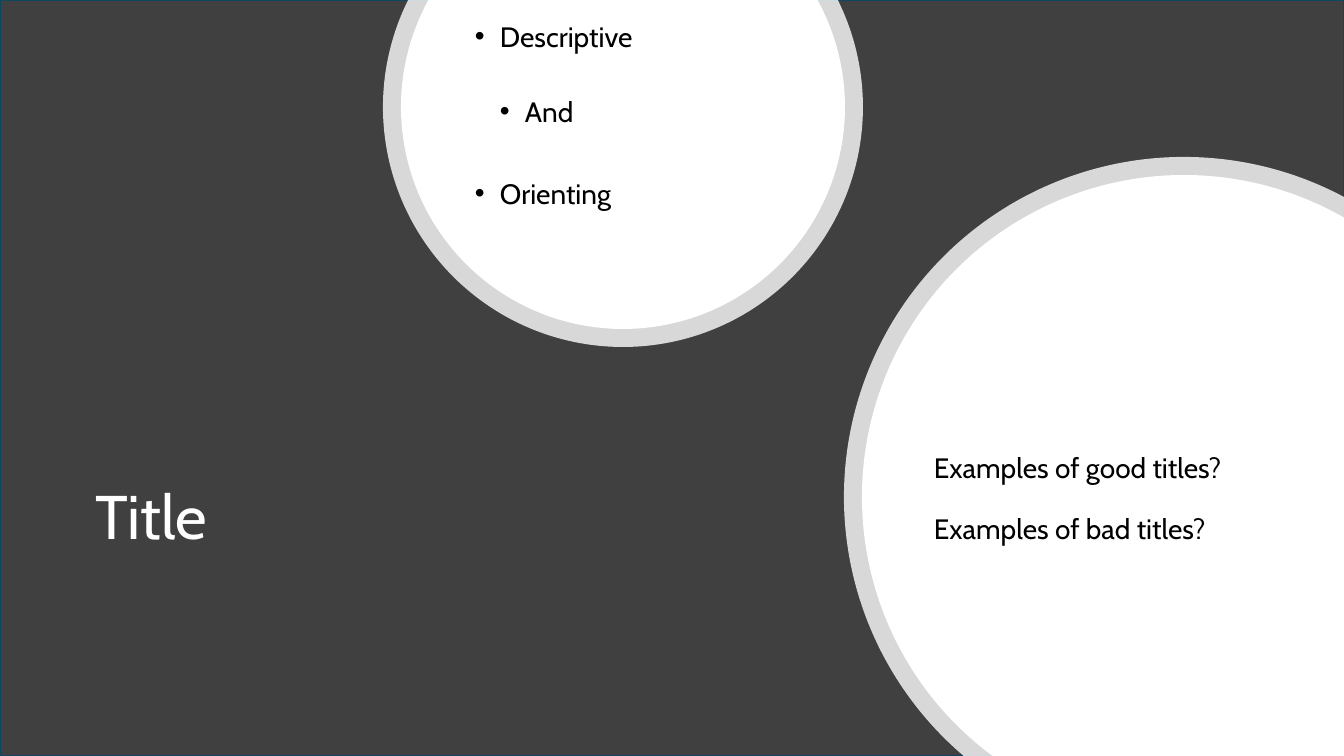
from math import acos, asin, cos, degrees, radians, sin

from lxml import etree
from pptx import Presentation
from pptx.dml.color import RGBColor
from pptx.enum.shapes import MSO_SHAPE as Shape
from pptx.enum.text import MSO_ANCHOR as Anchor, PP_ALIGN as Align
from pptx.oxml.ns import qn
from pptx.util import Pt

PX = 914400 / 100.8
WIDTH, HEIGHT = 1344, 756
FONT = "Cabin"
RING = 18
INDENT = 25


def px(value):
    return round(value * PX)


def color(hex_value):
    return RGBColor.from_string(hex_value)


def fill_white(shape, opacity):
    shape.fill.solid()
    shape.fill.fore_color.rgb = color("FFFFFF")
    if opacity < 100:
        tint = shape.element.spPr.find(".//" + qn("a:srgbClr"))
        etree.SubElement(tint, qn("a:alpha"), val=str(opacity * 1000))
    shape.line.fill.background()
    shape.shadow.inherit = False


def top_span(center_x, center_y, radius):
    """Angles of the arc that hangs from the top edge."""
    crossing = degrees(asin(center_y / radius))
    return -crossing, 180 + crossing


def corner_span(center_x, center_y, radius):
    """Angles of the arc from the bottom edge round to the right edge."""
    return (180 - degrees(asin((HEIGHT - center_y) / radius)),
            360 - degrees(acos((WIDTH - center_x) / radius)))


def add_cropped_disc(slide, center_x, center_y, radius, span, corners, opacity):
    """Draw a disc that stops at the slide edges."""
    start, end = span(center_x, center_y, radius)
    extremes = [angle for angle in range(0, 360, 90) if start < angle < end]
    arc = [(px(center_x + radius * cos(radians(angle))),
            px(center_y + radius * sin(radians(angle))))
           for angle in [start, *extremes, end]]
    edge = [(px(x), px(y)) for x, y in corners]
    builder = slide.shapes.build_freeform(*arc[0], scale=1.0)
    builder.add_line_segments(arc[1:] + edge, close=True)
    shape = builder.convert_to_shape()

    # Replace the chords between the extremes with one true arc
    outline = shape.element.spPr.find(".//" + qn("a:path"))
    for chord in outline.findall(qn("a:lnTo"))[:len(arc) - 1]:
        outline.remove(chord)
    curve = etree.Element(qn("a:arcTo"), wR=str(px(radius)), hR=str(px(radius)),
                          stAng=str(round(start % 360 * 60000)),
                          swAng=str(round((end - start) * 60000)))
    outline.find(qn("a:moveTo")).addnext(curve)
    fill_white(shape, opacity)


def add_ringed_disc(slide, center_x, center_y, radius, span, corners=()):
    for inset, opacity in ((0, 80), (RING, 100)):
        add_cropped_disc(slide, center_x, center_y, radius - inset,
                         span, corners, opacity)


def format_paragraph(paragraph, size, hex_value):
    paragraph.alignment = Align.LEFT
    paragraph.line_spacing = 0.9
    paragraph.font.name = FONT
    paragraph.font.size = Pt(size)
    paragraph.font.color.rgb = color(hex_value)


def add_bullet(paragraph, level):
    properties = paragraph._p.get_or_add_pPr()
    properties.set("marL", str(px(INDENT * (level + 1))))
    properties.set("indent", str(-px(INDENT)))
    etree.SubElement(properties, qn("a:buFont"), typeface="Arial")
    etree.SubElement(properties, qn("a:buChar"), char="•")
    # Bullet settings come before the default run properties
    properties.append(properties.find(qn("a:defRPr")))


def add_text(slide, left, top, width, height, lines, bulleted=False):
    """Each line is (text, level, space before in points)."""
    box = slide.shapes.add_textbox(px(left), px(top), px(width), px(height))
    frame = box.text_frame
    frame.word_wrap = True
    frame.vertical_anchor = Anchor.MIDDLE
    for index, (text, level, space_before) in enumerate(lines):
        paragraph = frame.add_paragraph() if index else frame.paragraphs[0]
        paragraph.text = text
        paragraph.level = level
        paragraph.space_before = Pt(space_before)
        format_paragraph(paragraph, 20, "000000")
        if bulleted:
            add_bullet(paragraph, level)
    return frame


def add_backdrop(slide):
    backdrop = slide.shapes.add_shape(Shape.RECTANGLE, 0, 0, px(WIDTH), px(HEIGHT))
    backdrop.fill.solid()
    backdrop.fill.fore_color.rgb = color("404040")
    backdrop.line.color.rgb = color("104760")
    backdrop.line.width = Pt(1.5)
    backdrop.shadow.inherit = False
    # Keep the title in front
    slide.shapes.title.element.addprevious(backdrop.element)


def set_title(slide, text):
    title = slide.shapes.title
    title.left, title.top = px(85), px(386)
    title.width, title.height = px(667), px(267)
    title.text_frame.text = text
    title.text_frame.vertical_anchor = Anchor.MIDDLE
    format_paragraph(title.text_frame.paragraphs[0], 44, "FFFFFF")


def main():
    presentation = Presentation()
    presentation.slide_width, presentation.slide_height = px(WIDTH), px(HEIGHT)
    slide = presentation.slides.add_slide(presentation.slide_layouts[5])

    # Dark backdrop and title
    add_backdrop(slide)
    set_title(slide, "Title")

    # Qualities of a title, in the upper disc
    add_ringed_disc(slide, 623, 107, 240, top_span)
    qualities = [("Descriptive", 0, 0), ("And", 1, 32), ("Orienting", 0, 37)]
    frame = add_text(slide, 465, 39, 318, 198, qualities, bulleted=True)
    frame.margin_bottom = px(48)

    # Questions, in the right disc
    add_ringed_disc(slide, 1184, 497, 340, corner_span, [(WIDTH, HEIGHT)])
    questions = [("Examples of good titles?", 0, 0), ("Examples of bad titles?", 0, 22)]
    add_text(slide, 924, 347, 383, 306, questions)

    presentation.save("out.pptx")


if __name__ == "__main__":
    main()
